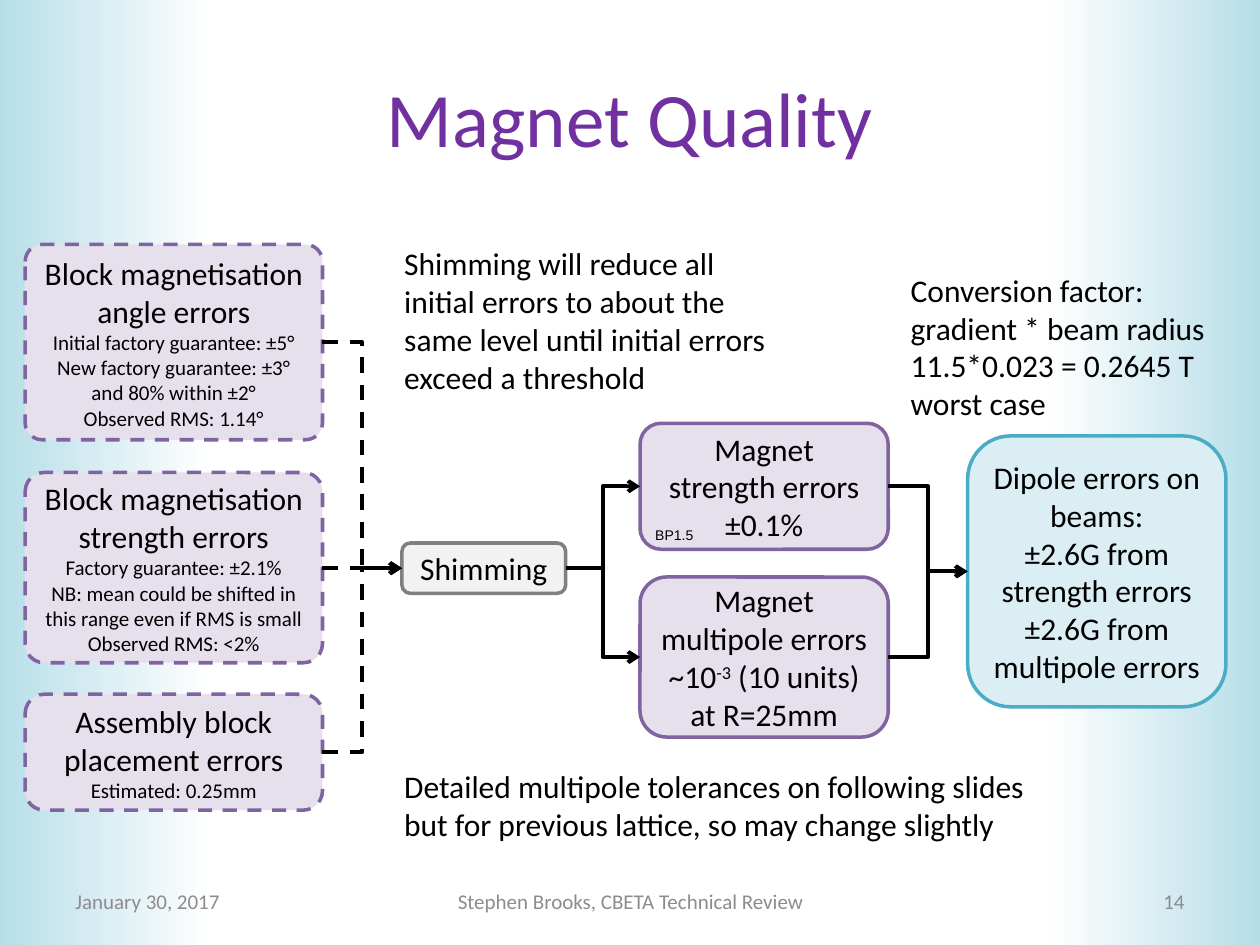
from pptx import Presentation
from pptx.dml.color import RGBColor
from pptx.enum.dml import MSO_LINE as Dash
from pptx.enum.shapes import MSO_CONNECTOR as Conn, MSO_SHAPE as Shape
from pptx.enum.text import MSO_ANCHOR as Anchor, PP_ALIGN as Align
from pptx.oxml.ns import qn
from pptx.util import Inches, Pt
from lxml.etree import SubElement

LILAC, VIOLET = "E6E0EC", "8064A2"
LEFT, RIGHT = 1, 3  # connection sites of a rounded box


def rgb(code):
    return RGBColor.from_string(code)


def write(shape, paras, size=18, color="000000", font="Calibri",
          align=Align.LEFT, anchor=Anchor.TOP, note=12, wrap=True, inset=None):
    """Fill a shape with paragraphs.

    A paragraph is a string, ("note", text) for small print,
    or a list of (text, baseline percent) runs.
    """
    frame = shape.text_frame
    frame.word_wrap = wrap
    frame.vertical_anchor = anchor
    if inset is not None:
        frame.margin_left = frame.margin_right = Inches(inset)
        frame.margin_top = frame.margin_bottom = Inches(inset)
    for i, para in enumerate(paras):
        line = frame.add_paragraph() if i else frame.paragraphs[0]
        line.alignment = align
        small = isinstance(para, tuple)
        text = para[1] if small else para
        runs = text if isinstance(text, list) else [(text, 0)]
        for words, base in runs:
            run = line.add_run()
            run.text = words
            run.font.name = font
            run.font.size = Pt(note if small else size)
            run.font.color.rgb = rgb(color)
            if base:
                run._r.get_or_add_rPr().set("baseline", str(base * 1000))


def label(slide, box, paras, **style):
    shape = slide.shapes.add_textbox(*map(Inches, box))
    write(shape, paras, **style)


def card(slide, box, paras, fill=LILAC, edge=VIOLET, dash=False, round=None):
    shape = slide.shapes.add_shape(Shape.ROUNDED_RECTANGLE, *map(Inches, box))
    shape.shadow.inherit = False
    if round:
        shape.adjustments[0] = round
    shape.fill.solid()
    shape.fill.fore_color.rgb = rgb(fill)
    shape.line.color.rgb = rgb(edge)
    shape.line.width = Pt(2)
    if dash:
        shape.line.dash_style = Dash.DASH
    write(shape, paras, align=Align.CENTER, anchor=Anchor.MIDDLE)
    return shape


def link(slide, start, end, dash=False):
    """Bent arrow from the right of one card to the left of the next."""
    arrow = slide.shapes.add_connector(Conn.ELBOW, 0, 0, 0, 0)
    arrow.begin_connect(start, RIGHT)
    arrow.end_connect(end, LEFT)
    arrow.line.color.rgb = rgb("000000")
    arrow.line.width = Pt(2.25)
    if dash:
        arrow.line.dash_style = Dash.DASH
    SubElement(arrow.line._get_or_add_ln(), qn("a:tailEnd"), type="arrow")
    SubElement(arrow._element.spPr, qn("a:effectLst"))


def edges(slide, width, height, band=1.69):
    """Fade both sides of the slide to white."""
    for left, turn in ((width - band, 180), (0, 0)):
        shape = slide.shapes.add_shape(
            Shape.RECTANGLE, *map(Inches, (left, 0, band, height)))
        shape.shadow.inherit = False
        shape.rotation = turn
        shape.line.fill.background()
        shape.fill.gradient()
        shape.fill.gradient_angle = 0
        for stop, code, at in zip(shape.fill.gradient_stops,
                                  ("B7DEE8", "FFFFFF"), (0, 1)):
            stop.color.rgb = rgb(code)
            stop.position = at
        tree = slide.shapes._spTree
        tree.remove(shape._element)
        tree.insert(2, shape._element)


def heading(slide, box, text):
    title = slide.shapes.title
    title.left, title.top, title.width, title.height = map(Inches, box)
    write(title, [text], size=44, color="7030A0",
          align=Align.CENTER, anchor=Anchor.MIDDLE)


def footer(slide, top, height):
    for left, width, text, align in (
            (0.5, 2.33, "January 30, 2017", Align.LEFT),
            (3.42, 3.17, "Stephen Brooks, CBETA Technical Review", Align.CENTER),
            (7.17, 2.33, "14", Align.RIGHT)):
        label(slide, (left, top, width, height), [text], size=12,
              color="8C8C8C", align=align, anchor=Anchor.MIDDLE)


def causes(slide, left, width):
    """Column of initial errors."""
    rows = (
        (1.94, 1.55, 0.087, "Block magnetisation angle errors",
         ("Initial factory guarantee: ±5°",
          "New factory guarantee: ±3° and 80% within ±2°",
          "Observed RMS: 1.14°")),
        (3.75, 1.51, 0.1, "Block magnetisation strength errors",
         ("Factory guarantee: ±2.1%",
          "NB: mean could be shifted in this range even if RMS is small",
          "Observed RMS: <2%")),
        (5.51, 0.92, None, "Assembly block placement errors",
         ("Estimated: 0.25mm",)),
    )
    return [card(slide, (left, top, width, height),
                 [head] + [("note", text) for text in notes],
                 dash=True, round=round)
            for top, height, round, head, notes in rows]


def results(slide, left, width):
    """Column of magnet errors left after shimming."""
    return [
        card(slide, (left, 3.36, width, 1),
             ["Magnet strength errors", "±0.1%"]),
        card(slide, (left, 4.58, width, 1.27),
             ["Magnet multipole errors",
              [("~10", 0), ("-3", 30), (" (10 units) at R=25mm", 0)]]),
    ]


def flow(slide):
    first = causes(slide, 0.2, 2.36)
    shim = card(slide, (3.19, 4.31, 1.3, 0.4), ["Shimming"], "F2F2F2", "808080")
    after = results(slide, 5.08, 1.97)
    beam = card(slide, (7.68, 3.46, 2.05, 2.15),
                ["Dipole errors on beams:", "±2.6G from strength errors",
                 "±2.6G from multipole errors"], "DBEEF4", "4BACC6")
    for cause in first:
        link(slide, cause, shim, dash=True)
    for result in after:
        link(slide, shim, result)
        link(slide, result, beam)


def remarks(slide):
    label(slide, (3.11, 1.89, 3.07, 1.31),
          ["Shimming will reduce all initial errors to about the same level "
           "until initial errors exceed a threshold"])
    label(slide, (3.11, 6.04, 5.46, 0.71),
          ["Detailed multipole tolerances on following slides but for "
           "previous lattice, so may change slightly"])
    label(slide, (7.13, 2.1, 2.6, 1.31),
          ["Conversion factor:", "gradient * beam radius",
           "11.5*0.023 = 0.2645 T worst case"])
    label(slide, (5.16, 4.14, 0.39, 0.21), ["BP1.5"],
          size=8, font="Arial", wrap=False, inset=0.04)


def main():
    deck = Presentation()
    deck.slide_width, deck.slide_height = Inches(10), Inches(7.5)
    slide = deck.slides.add_slide(deck.slide_layouts[5])
    edges(slide, 10, 7.5)
    heading(slide, (0.5, 0.3, 9, 1.25), "Magnet Quality")
    flow(slide)
    remarks(slide)
    footer(slide, 6.95, 0.4)
    deck.save("out.pptx")


if __name__ == "__main__":
    main()
